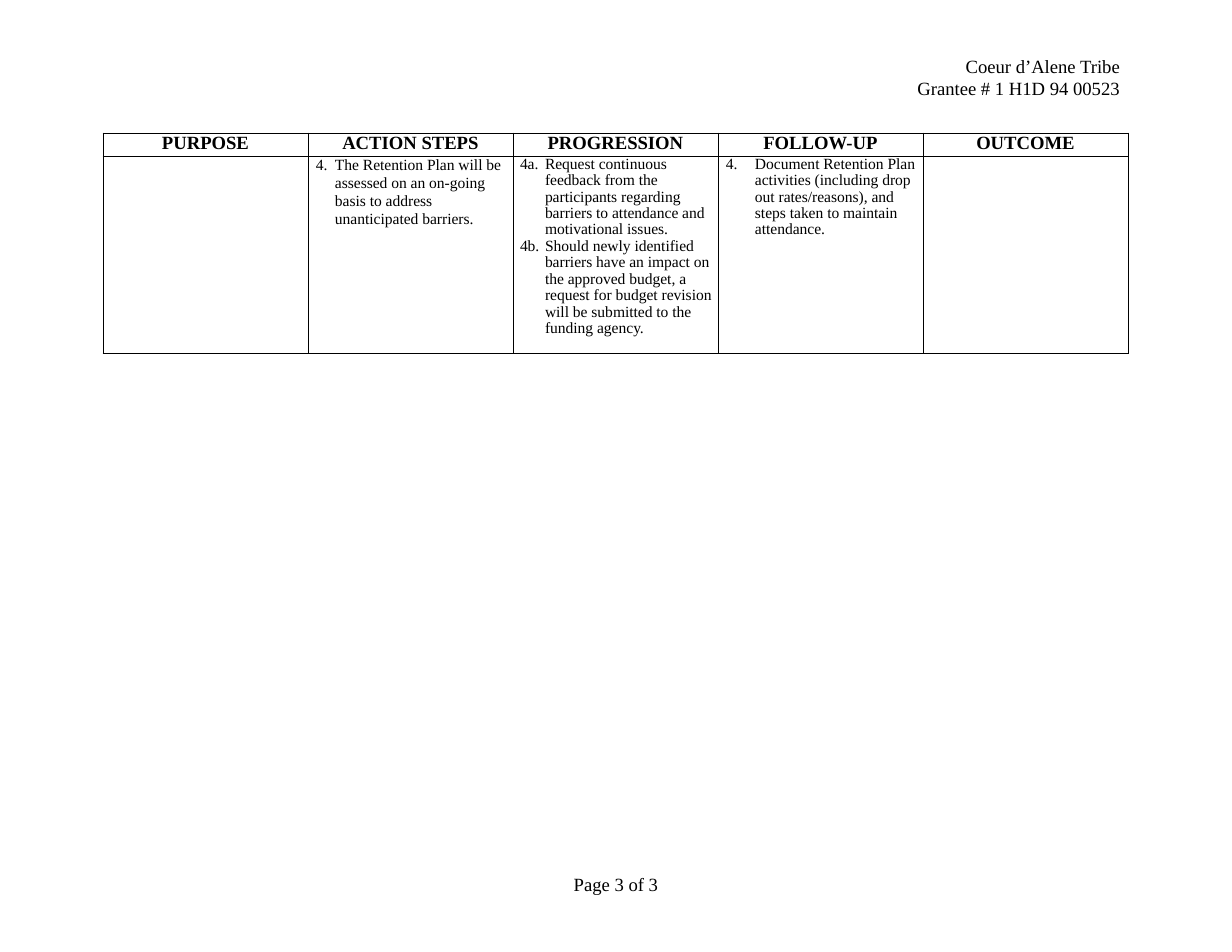
from lxml import etree
from pptx import Presentation
from pptx.dml.color import RGBColor
from pptx.enum.text import PP_ALIGN
from pptx.oxml.ns import qn
from pptx.util import Pt

BLACK = RGBColor(0x00, 0x00, 0x00)
LEFT, CENTER, RIGHT = PP_ALIGN.LEFT, PP_ALIGN.CENTER, PP_ALIGN.RIGHT
EMU_PER_INCH, PX_PER_INCH = 914400, 112
BLANK_LAYOUT = 6
BORDER_WIDTH = Pt(0.58)

HEADINGS = ["PURPOSE", "ACTION STEPS", "PROGRESSION", "FOLLOW-UP", "OUTCOME"]
# Column number: paragraphs and their format
DETAILS = {
    1: (["4.\tThe Retention Plan will be assessed on an on-going basis to address "
         "unanticipated barriers."],
        dict(indent=27, hanging=19, line_spacing=Pt(11.5))),
    2: (["4a.\tRequest continuous feedback from the participants regarding barriers to "
         "attendance and motivational issues.",
         "4b.\tShould newly identified barriers have an impact on the approved budget, a "
         "request for budget revision will be submitted to the funding agency."],
        dict(indent=32, hanging=25, line_spacing=0.96)),
    3: (["4.\tDocument Retention Plan activities (including drop out rates/reasons), "
         "and steps taken to maintain attendance."],
        dict(indent=37, hanging=29, line_spacing=0.96)),
}


def px(length):
    return round(length * EMU_PER_INCH / PX_PER_INCH)


def write_text(text_frame, paragraphs, size=12, bold=False, align=LEFT,
               line_spacing=None, indent=0, hanging=0):
    """Fill a text frame; indent and hanging are in px."""
    for index, text in enumerate(paragraphs):
        paragraph = text_frame.paragraphs[0] if index == 0 else text_frame.add_paragraph()
        paragraph.alignment = align
        if line_spacing:
            paragraph.line_spacing = line_spacing
        if indent:
            properties = paragraph._p.get_or_add_pPr()
            properties.set("marL", str(px(indent)))
            properties.set("indent", str(-px(hanging)))
        run = paragraph.add_run()
        run.text = text
        run.font.name = "Times New Roman"
        run.font.size = Pt(size)
        run.font.bold = bold
        run.font.color.rgb = BLACK


def clear_margins(container):
    container.margin_left = container.margin_right = 0
    container.margin_top = container.margin_bottom = 0


def add_borders(cell):
    properties = cell._tc.get_or_add_tcPr()
    for position, side in enumerate(("a:lnL", "a:lnR", "a:lnT", "a:lnB")):
        line = etree.Element(qn(side), w=str(BORDER_WIDTH))
        fill = etree.SubElement(line, qn("a:solidFill"))
        etree.SubElement(fill, qn("a:srgbClr"), val=str(BLACK))
        properties.insert(position, line)


class PlanPage:
    def __init__(self, slide):
        self.slide = slide

    def text_box(self, left, top, width, height, paragraphs, **text_format):
        box = self.slide.shapes.add_textbox(px(left), px(top), px(width), px(height))
        box.text_frame.word_wrap = True
        clear_margins(box.text_frame)
        write_text(box.text_frame, paragraphs, **text_format)

    def plan_table(self, left, top, column_width, row_heights):
        table = self.slide.shapes.add_table(
            len(row_heights), len(HEADINGS), px(left), px(top),
            px(column_width * len(HEADINGS)), px(sum(row_heights))).table
        table.first_row = table.horz_banding = False
        for column in table.columns:
            column.width = px(column_width)
        for row, height in zip(table.rows, row_heights):
            row.height = px(height)
        for cell in table.iter_cells():
            clear_margins(cell)
            cell.fill.background()
            add_borders(cell)
        for column, heading in enumerate(HEADINGS):
            write_text(table.cell(0, column).text_frame, [heading], bold=True, align=CENTER)
        for column, (paragraphs, text_format) in DETAILS.items():
            write_text(table.cell(1, column).text_frame, paragraphs, size=10, **text_format)


def main():
    presentation = Presentation()
    presentation.slide_width = px(1232)
    presentation.slide_height = px(952)
    slide = presentation.slides.add_slide(presentation.slide_layouts[BLANK_LAYOUT])

    page = PlanPage(slide)
    page.text_box(573, 873, 86, 24, ["Page 3 of 3"], align=CENTER)
    page.text_box(910, 56, 210, 44, ["Coeur d’Alene Tribe", "Grantee # 1 H1D 94 00523"],
                  align=RIGHT, line_spacing=Pt(13.8))
    page.plan_table(103, 133, 205, [23, 197])
    presentation.save("out.pptx")


if __name__ == "__main__":
    main()
